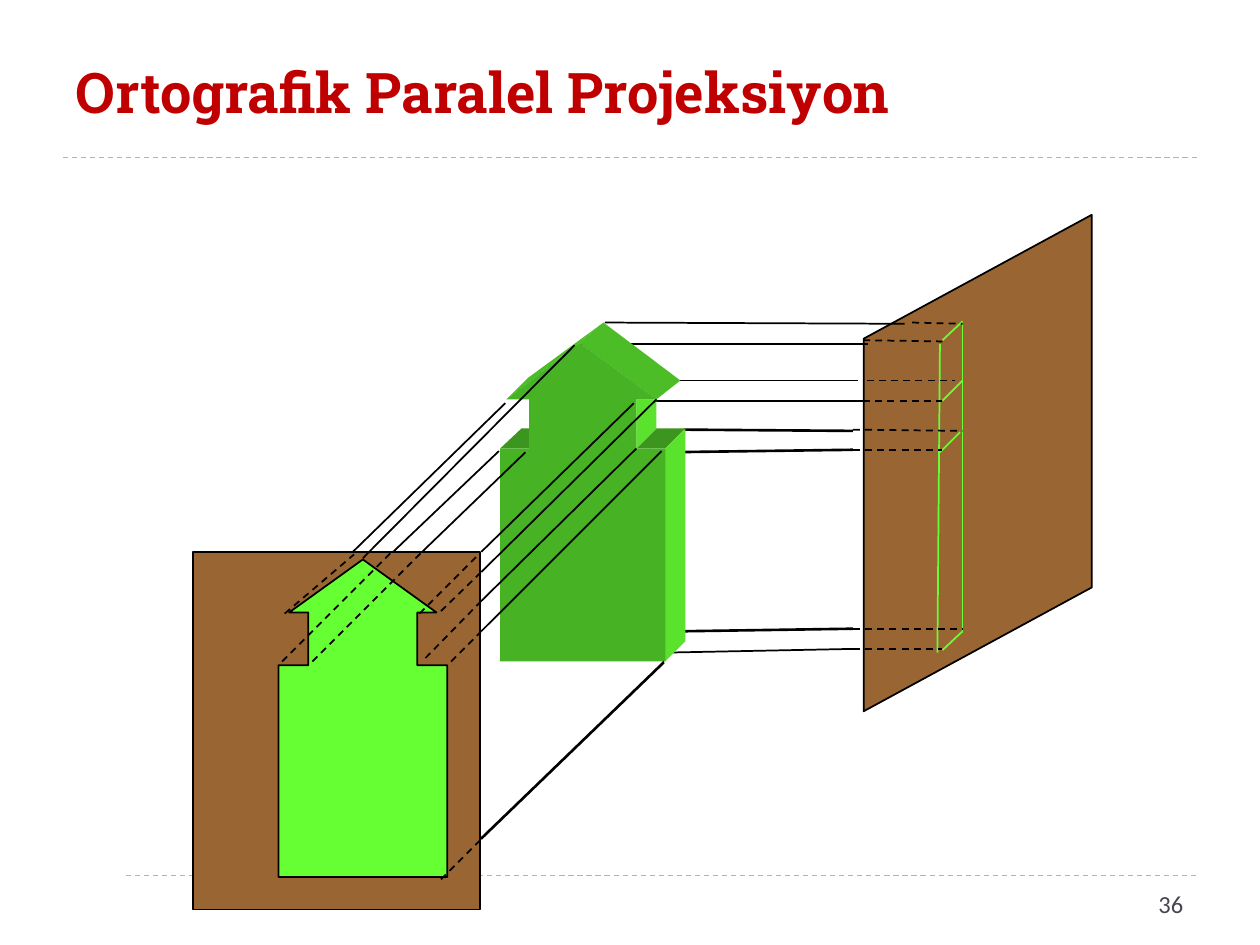
from typing import NamedTuple

from lxml.etree import SubElement
from pptx import Presentation
from pptx.dml.color import RGBColor
from pptx.enum.dml import MSO_LINE
from pptx.enum.shapes import MSO_CONNECTOR, MSO_SHAPE
from pptx.enum.text import MSO_ANCHOR, PP_ALIGN
from pptx.oxml.ns import qn
from pptx.util import Inches, Pt

COLS, ROWS = 10, 7.5
BLACK, BROWN, LIME = "000000", "996633", "66FF33"
FRONT, SIDE, ROOF, LEDGE = "47B224", "5AE22D", "4CBD26", "3C951E"

prs = Presentation()
prs.slide_width, prs.slide_height = Inches(10), Inches(7.5)
s = prs.slides.add_slide(prs.slide_layouts[5])


class Line(NamedTuple):
    x1: float
    y1: float
    x2: float
    y2: float
    width: float = 1


class Face(NamedTuple):
    color: str
    points: tuple


def col(n: float) -> int:
    return round(prs.slide_width * n / COLS)


def row(n: float) -> int:
    return round(prs.slide_height * n / ROWS)


def box(x: float, y: float, w: float, h: float) -> tuple:
    return col(x), row(y), col(w), row(h)


def rgb(color: str) -> RGBColor:
    return RGBColor.from_string(color)


def draw_lines(lines: tuple, color: str = BLACK, dashed: bool = False) -> None:
    for ln in lines:
        c = s.shapes.add_connector(MSO_CONNECTOR.STRAIGHT, col(ln.x1), row(ln.y1),
                                   col(ln.x2), row(ln.y2))
        c.line.color.rgb = rgb(color)
        c.line.width = Pt(ln.width)
        if dashed:
            c.line.dash_style = MSO_LINE.DASH
        SubElement(c._element.spPr, qn("a:effectLst"))


def paint(sp, fill: str, outline: str = "") -> None:
    sp.shadow.inherit = False
    sp.fill.solid()
    sp.fill.fore_color.rgb = rgb(fill)
    if outline:
        sp.line.color.rgb = rgb(outline)
        sp.line.width = Pt(1)
    else:
        sp.line.fill.background()


def add_preset(kind: MSO_SHAPE, at: tuple, fill: str, adj: tuple = ()):
    sp = s.shapes.add_shape(kind, *box(*at))
    for i, value in enumerate(adj):
        sp.adjustments[i] = value
    paint(sp, fill, BLACK)
    return sp


def draw_face(face: Face) -> None:
    first, *rest = [(col(x), row(y)) for x, y in face.points]
    fb = s.shapes.build_freeform(*first)
    fb.add_line_segments(rest, close=True)
    paint(fb.convert_to_shape(), face.color)


def write(tf, text: str, *, size: float, font: str, color: str, bold: bool = False,
          align: PP_ALIGN = PP_ALIGN.LEFT) -> None:
    tf.word_wrap = True
    tf.vertical_anchor = MSO_ANCHOR.MIDDLE
    p = tf.paragraphs[0]
    p.alignment = align
    r = p.add_run()
    r.text = text
    r.font.size, r.font.name, r.font.bold = Pt(size), font, bold
    r.font.color.rgb = rgb(color)


SIDE_RAYS = (
    Line(5.26, 5.18, 6.77, 5.15), Line(5.43, 5.01, 6.77, 4.99, 1.5),
    Line(5.43, 3.41, 6.77, 3.42, 1.5), Line(5.26, 3.59, 6.77, 3.57, 1.5),
    Line(5.19, 3.18, 6.85, 3.18), Line(4.8, 2.56, 7.18, 2.57),
    Line(5.39, 3.02, 6.81, 3.02), Line(4.61, 2.73, 6.89, 2.73),
)
SIDE_HIDDEN = (
    Line(6.77, 3.57, 7.48, 3.57), Line(6.77, 3.41, 7.64, 3.42),
    Line(6.77, 5.15, 7.48, 5.15), Line(6.77, 4.99, 7.64, 4.99),
    Line(6.85, 3.18, 7.48, 3.18), Line(6.85, 2.7, 7.48, 2.71),
    Line(7.24, 2.56, 7.64, 2.57), Line(6.88, 3.02, 7.58, 3.02),
)
SIDE_VIEW = (
    Line(7.64, 2.56, 7.64, 5.01), Line(7.46, 2.73, 7.44, 5.18),
    Line(7.46, 3.59, 7.62, 3.43), Line(7.48, 5.16, 7.64, 5.01),
    Line(7.48, 2.7, 7.64, 2.55), Line(7.48, 3.18, 7.64, 3.02),
)
FRONT_RAYS = (
    Line(5.21, 3.17, 3.82, 4.54), Line(5.25, 3.58, 3.82, 5.01),
    Line(4.17, 3.59, 3.35, 4.38), Line(4.01, 3.2, 2.8, 4.38),
    Line(4.56, 2.74, 2.88, 4.43), Line(5.27, 5.26, 3.82, 6.66),
    Line(3.96, 3.58, 3.12, 4.38), Line(5.05, 3.56, 3.82, 4.77),
    Line(5.27, 5.25, 3.82, 6.65), Line(5.03, 3.2, 3.82, 4.38),
)
FRONT_HIDDEN = (
    Line(2.48, 5.25, 3.35, 4.38), Line(2.24, 5.25, 3.11, 4.38),
    Line(2.26, 4.87, 2.81, 4.4), Line(3.5, 4.85, 3.82, 4.54),
    Line(3.58, 5.25, 3.82, 5.01), Line(3.5, 6.98, 3.82, 6.66),
    Line(3.82, 4.77, 3.35, 5.25), Line(3.33, 4.87, 3.8, 4.4),
)
SOLID_OBJECT = (
    Face(ROOF, ((4.02, 3.17), (4.19, 3.0), (4.79, 2.56), (4.6, 2.72))),
    Face(ROOF, ((4.6, 2.72), (4.79, 2.56), (5.4, 3.02), (5.21, 3.17))),
    Face(LEDGE, ((3.97, 3.56), (4.14, 3.4), (4.2, 3.4), (4.2, 3.56))),
    Face(LEDGE, ((5.05, 3.56), (5.21, 3.4), (5.44, 3.4), (5.28, 3.56))),
    Face(SIDE, ((5.05, 3.17), (5.21, 3.17), (5.21, 3.4), (5.05, 3.56))),
    Face(SIDE, ((5.28, 3.56), (5.44, 3.4), (5.44, 5.09), (5.28, 5.25))),
    Face(FRONT, ((3.97, 5.25), (5.28, 5.25), (5.28, 3.56), (5.05, 3.56),
                 (5.05, 3.17), (5.21, 3.17), (4.6, 2.72), (4.02, 3.17),
                 (4.2, 3.17), (4.2, 3.56), (3.97, 3.56))),
)

title = s.shapes.title
title.left, title.top, title.width, title.height = box(0.5, 0.22, 9, 1)
write(title.text_frame, "Ortografik Paralel Projeksiyon", size=32,
      font="Roboto Slab", color="C00000", bold=True)
draw_lines((Line(1, 6.95, 9.5, 6.95, 0.75), Line(0.5, 1.25, 9.5, 1.25, 0.75)),
           "9FB8CD", dashed=True)

side_plane = add_preset(MSO_SHAPE.PARALLELOGRAM, (5.79, 2.77, 3.94, 1.81), BROWN, (0.543,))
side_plane.rotation = 90
side_plane._element.spPr.xfrm.set("flipH", "1")
draw_lines(SIDE_RAYS)
draw_lines(SIDE_VIEW, LIME)
draw_lines(SIDE_HIDDEN, dashed=True)

add_preset(MSO_SHAPE.RECTANGLE, (1.53, 4.38, 2.28, 2.84), BROWN)
add_preset(MSO_SHAPE.UP_ARROW_CALLOUT, (2.21, 4.44, 1.34, 2.52), LIME,
           (0.645, 0.436, 0.314, 0.667))
for face in SOLID_OBJECT:
    draw_face(face)
draw_lines(FRONT_RAYS)
draw_lines(FRONT_HIDDEN, dashed=True)

number = s.shapes.add_textbox(*box(7.15, 6.97, 2.34, 0.4))
write(number.text_frame, "36", size=14, font="Calibri", color="464653",
      align=PP_ALIGN.RIGHT)

prs.save("out.pptx")
